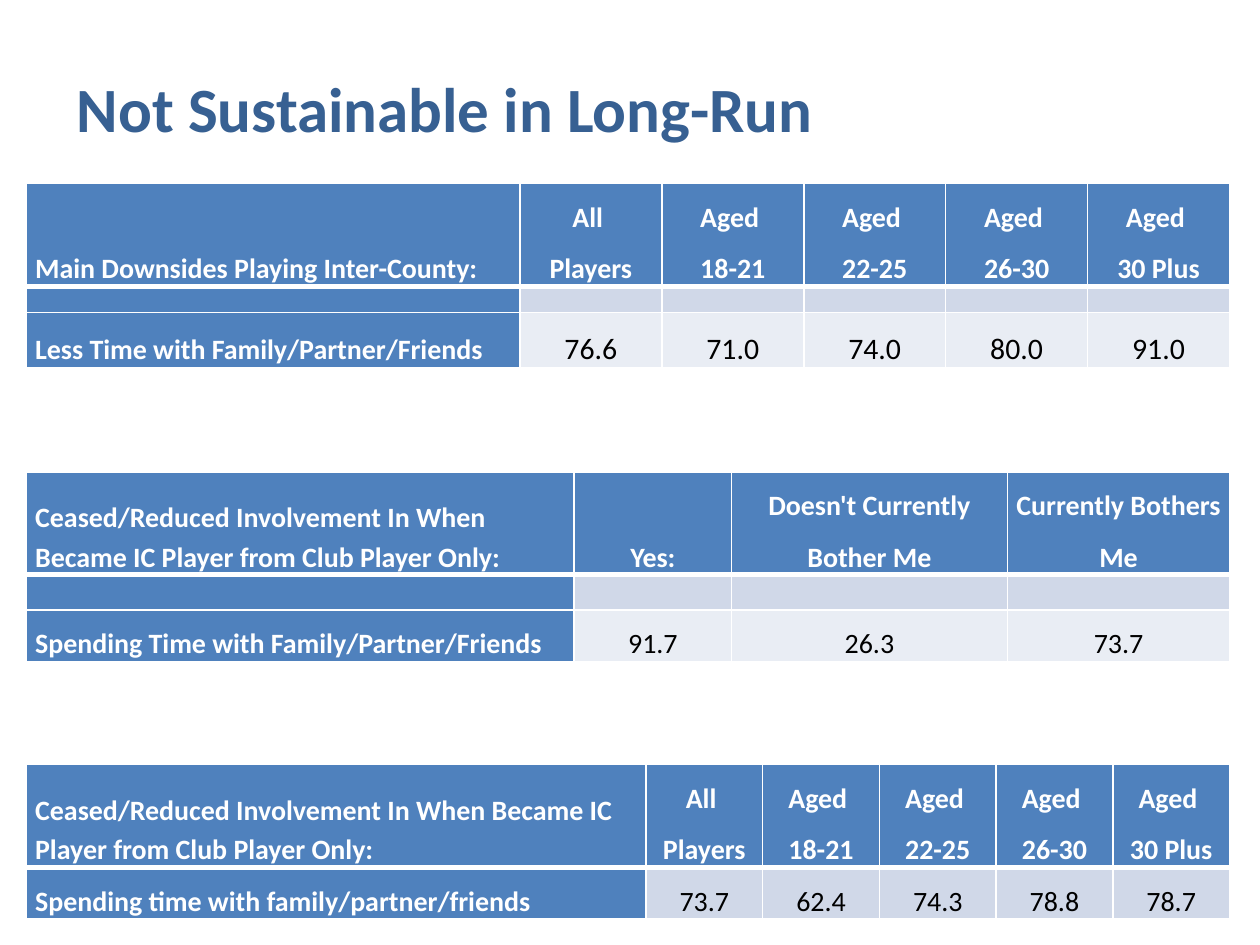
from lxml import etree
from pptx import Presentation
from pptx.dml.color import RGBColor
from pptx.enum.text import MSO_ANCHOR, MSO_AUTO_SIZE, PP_ALIGN
from pptx.oxml.ns import qn
from pptx.util import Pt

LEFT, MID = PP_ALIGN.LEFT, PP_ALIGN.CENTER
BOTTOM = MSO_ANCHOR.BOTTOM
FIXED = MSO_AUTO_SIZE.NONE

WHITE = RGBColor(0xFF, 0xFF, 0xFF)
BLACK = RGBColor(0, 0, 0)
NAVY = RGBColor(0x37, 0x60, 0x92)
BLUE = RGBColor(0x4F, 0x81, 0xBD)
PALE = RGBColor(0xD0, 0xD8, 0xE8)
LIGHT = RGBColor(0xE9, 0xED, 0xF4)


def apply(item, values):
    for key, value in values.items():
        setattr(item, key, value)


class Deck:
    face = "Calibri"
    inset = {"margin_left": Pt(5), "margin_right": Pt(5),
             "margin_top": 0, "margin_bottom": 0,
             "vertical_anchor": BOTTOM}

    def __init__(self):
        self.file = Presentation()
        apply(self.file, {"slide_width": Pt(720), "slide_height": Pt(540)})
        self.slide = self.file.slides.add_slide(self.file.slide_layouts[5])

    def label(self, para, text, size, color, bold):
        run = para.add_run()
        run.text = text
        apply(run.font, {"name": self.face, "size": Pt(size), "bold": bold})
        run.font.color.rgb = color

    def title(self, text, left, top, width, height):
        box = self.slide.shapes.title
        apply(box, {"left": Pt(left), "top": Pt(top),
                    "width": Pt(width), "height": Pt(height)})
        frame = box.text_frame
        apply(frame, {"margin_top": 0, "margin_bottom": 0, "word_wrap": True,
                      "auto_size": FIXED, "vertical_anchor": BOTTOM})
        para = frame.paragraphs[0]
        para.alignment = LEFT
        self.label(para, text, 36, NAVY, True)

    def border(self, cell, row):
        # Heavy rule between the header and the body
        widths = {"L": 1, "R": 1, "T": 3 if row == 1 else 1,
                  "B": 3 if row == 0 else 1}
        props = cell._tc.get_or_add_tcPr()
        for spot, (side, width) in enumerate(widths.items()):
            line = etree.Element(qn("a:ln" + side), w=str(Pt(width)))
            fill = etree.SubElement(line, qn("a:solidFill"))
            etree.SubElement(fill, qn("a:srgbClr"), val=str(WHITE))
            props.insert(spot, line)

    def cell(self, cell, text, row, col, size):
        head = row == 0 or col == 0
        apply(cell, self.inset)
        cell.fill.solid()
        cell.fill.fore_color.rgb = BLUE if head else (LIGHT, PALE)[row % 2]
        self.border(cell, row)
        frame = cell.text_frame
        if not text:
            # Small text keeps the spacer row low
            etree.SubElement(frame.paragraphs[0]._p, qn("a:endParaRPr"),
                             sz="800")
        for spot, part in enumerate(text.split("\n") if text else []):
            para = frame.add_paragraph() if spot else frame.paragraphs[0]
            apply(para, {"alignment": MID if col else LEFT,
                         "line_spacing": 1.5 if row or col else 1.15})
            self.label(para, part, 16 if head else size,
                       WHITE if head else BLACK, head)

    def table(self, top, cols, rows, data, size=16):
        grid = self.slide.shapes.add_table(
            len(rows), len(cols), Pt(15.1), Pt(top),
            Pt(sum(cols)), Pt(sum(rows))).table
        for item, width in zip(grid.columns, cols):
            item.width = Pt(width)
        for item, height in zip(grid.rows, rows):
            item.height = Pt(height)
        for row, texts in enumerate(data):
            for col, text in enumerate(texts):
                self.cell(grid.cell(row, col), text, row, col, size)


def main():
    deck = Deck()
    ages = ["All \nPlayers"] + [
        "Aged \n" + span for span in ("18-21", "22-25", "26-30", "30 Plus")]
    ceased = ("Ceased/Reduced Involvement In When Became IC Player "
              "from Club Player Only:")

    deck.title("Not Sustainable in Long-Run", 36.7, 40.3, 644.4, 42.5)

    # Main downsides by age
    deck.table(105, [282] + [81.1] * 5, [58.5, 15, 31.3], [
        ["Main Downsides Playing Inter-County:"] + ages,
        [""] * 6,
        ["Less Time with Family/Partner/Friends",
         "76.6", "71.0", "74.0", "80.0", "91.0"]], size=17)

    # Reduced involvement and whether it bothers
    deck.table(269.6, [313, 90, 157.5, 127.2], [58.3, 20.3, 29.2], [
        [ceased, "Yes:", "Doesn't Currently Bother Me",
         "Currently Bothers Me"],
        [""] * 4,
        ["Spending Time with Family/Partner/Friends",
         "91.7", "26.3", "73.7"]])

    # Reduced involvement by age
    deck.table(437, [354] + [66.7] * 5, [58.3, 29.2], [
        [ceased] + ages,
        ["Spending time with family/partner/friends",
         "73.7", "62.4", "74.3", "78.8", "78.7"]])

    deck.file.save("out.pptx")


if __name__ == "__main__":
    main()
